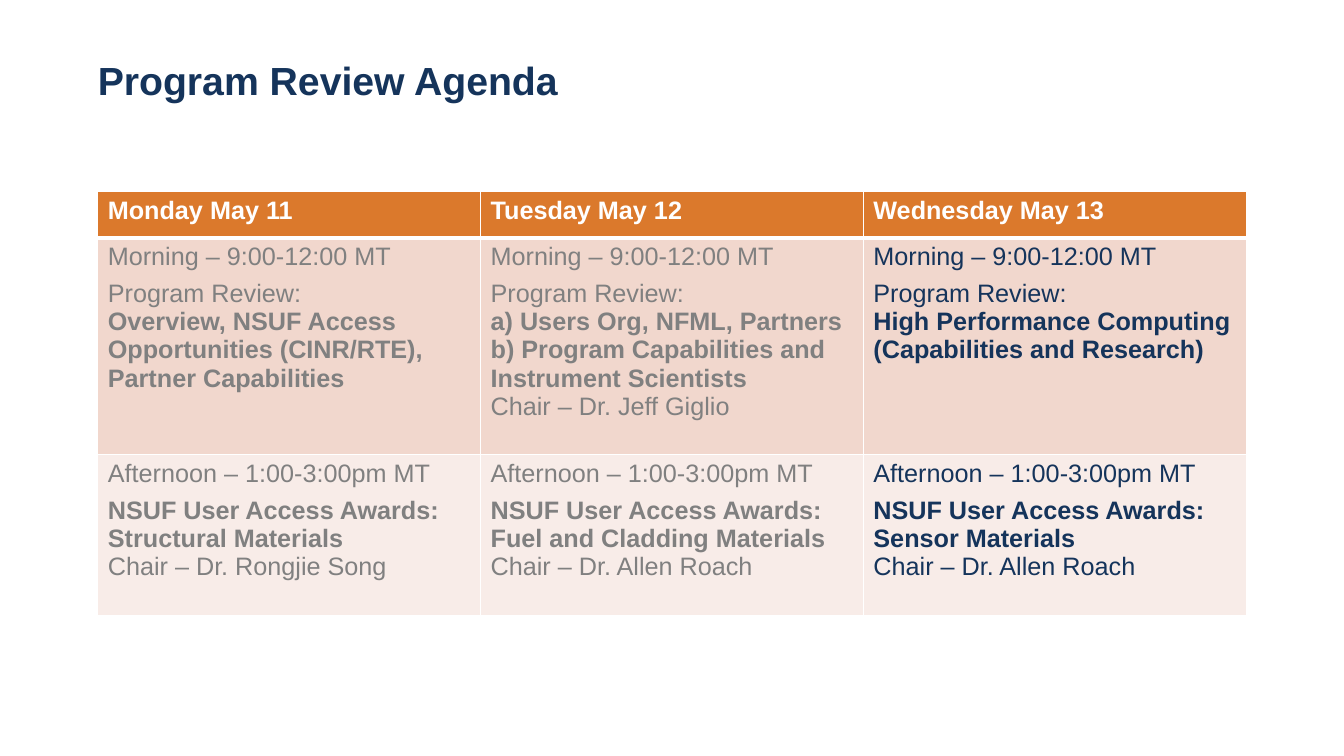
from pptx import Presentation
from pptx.dml.color import RGBColor
from pptx.enum.text import MSO_ANCHOR
from pptx.oxml.ns import qn
from pptx.util import Inches, Pt
from lxml import etree

TOP = MSO_ANCHOR.TOP
NAVY, GRAY, WHITE, ORANGE = "15345B", "808080", "FFFFFF", "DB792C"
ROW_FILLS = [ORANGE, "F1D7CD", "F8ECE8"]
ROW_HEIGHTS = [0.46, 2.15, 1.6]
COLUMN_COLORS = [GRAY, GRAY, NAVY]
MORNING = ("Morning – 9:00-12:00 MT", False)
REVIEW = ("Program Review:", False)
AFTERNOON = ("Afternoon – 1:00-3:00pm MT", False)
AWARDS = ("NSUF User Access Awards:", True)
ROACH = ("Chair – Dr. Allen Roach", False)

AGENDA = [
    [[("Monday May 11", True)], [("Tuesday May 12", True)], [("Wednesday May 13", True)]],
    [
        [MORNING, REVIEW,
         ("Overview, NSUF Access Opportunities (CINR/RTE), Partner Capabilities", True)],
        [MORNING, REVIEW,
         ("a) Users Org, NFML, Partners", True),
         ("b) Program Capabilities and Instrument Scientists", True),
         ("Chair – Dr. Jeff Giglio", False)],
        [MORNING, REVIEW,
         ("High Performance Computing (Capabilities and Research)", True)],
    ],
    [
        [AFTERNOON, AWARDS, ("Structural Materials", True),
         ("Chair – Dr. Rongjie Song", False)],
        [AFTERNOON, AWARDS, ("Fuel and Cladding Materials", True), ROACH],
        [AFTERNOON, AWARDS, ("Sensor Materials", True), ROACH],
    ],
]


def rgb(value):
    return RGBColor.from_string(value)


class SlideBuilder:
    font = "Arial"

    def __init__(self, slide):
        self.slide = slide

    def add_lines(self, tf, lines, size, color, **paragraph_format):
        for i, (text, bold) in enumerate(lines):
            p = tf.paragraphs[0] if i == 0 else tf.add_paragraph()
            for name, value in paragraph_format.items():
                setattr(p, name, value)
            r = p.add_run()
            r.text = text
            style = {"name": self.font, "size": Pt(size), "bold": bold}
            for name, value in style.items():
                setattr(r.font, name, value)
            r.font.color.rgb = rgb(color)

    def title(self, text, left, top, width, height):
        sp = self.slide.shapes.add_textbox(
            Inches(left), Inches(top), Inches(width), Inches(height))
        tf = sp.text_frame
        frame = {"word_wrap": True, "vertical_anchor": TOP,
                 "margin_left": 0, "margin_top": 0}
        for name, value in frame.items():
            setattr(tf, name, value)
        self.add_lines(tf, [(text, True)], 28, NAVY, line_spacing=0.9)

    def borders(self, cell, widths):
        props = cell._tc.get_or_add_tcPr()
        for i, (side, width) in enumerate(widths.items()):
            line = etree.Element(qn(f"a:ln{side}"), w=str(Pt(width)))
            fill = etree.SubElement(line, qn("a:solidFill"))
            etree.SubElement(fill, qn("a:srgbClr"), val=WHITE)
            props.insert(i, line)

    def table(self, rows, left, top, width):
        frame = self.slide.shapes.add_table(
            len(rows), len(rows[0]), Inches(left), Inches(top),
            Inches(width), Inches(sum(ROW_HEIGHTS)))
        table = frame.table
        for i, row in enumerate(rows):
            table.rows[i].height = Inches(ROW_HEIGHTS[i])
            for j, lines in enumerate(row):
                cell = table.cell(i, j)
                cell.fill.solid()
                cell.fill.fore_color.rgb = rgb(ROW_FILLS[i])
                self.borders(cell, {"L": 1, "R": 1,
                                    "T": 3 if i == 1 else 1,
                                    "B": 3 if i == 0 else 1})
                color = COLUMN_COLORS[j] if i else WHITE
                self.add_lines(cell.text_frame, lines, 18, color)
                if i:
                    cell.text_frame.paragraphs[0].space_after = Pt(6)


def main():
    prs = Presentation()
    prs.slide_width, prs.slide_height = Inches(13.33), Inches(7.5)
    s = SlideBuilder(prs.slides.add_slide(prs.slide_layouts[6]))
    s.title("Program Review Agenda", 0.97, 0.61, 11.39, 1.1)
    s.table(AGENDA, 0.97, 1.9, 11.39)
    prs.save("out.pptx")


if __name__ == "__main__":
    main()
